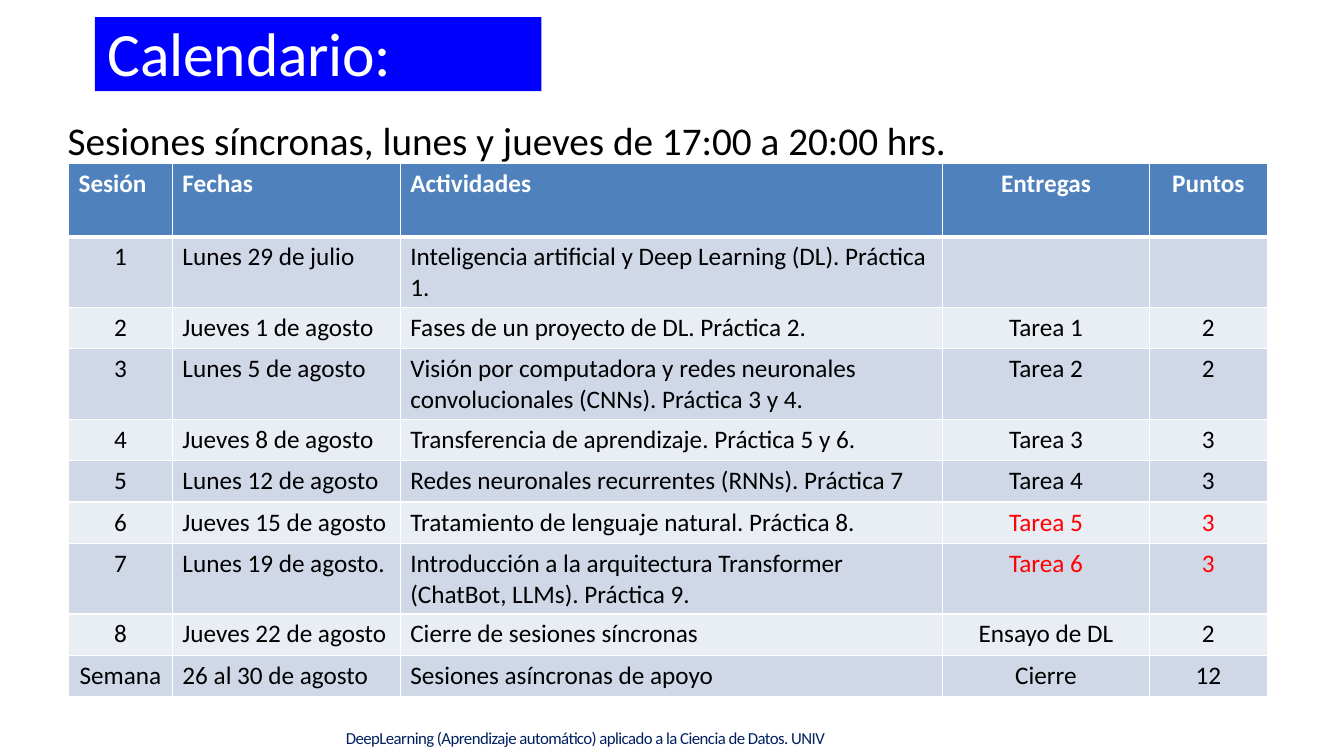
from lxml import etree
from pptx import Presentation
from pptx.dml.color import RGBColor
from pptx.enum.text import MSO_ANCHOR, MSO_AUTO_SIZE, PP_ALIGN
from pptx.oxml.ns import qn
from pptx.util import Inches, Pt

LEFT, CENTER = PP_ALIGN.LEFT, PP_ALIGN.CENTER
TOP = MSO_ANCHOR.TOP
GROW = MSO_AUTO_SIZE.SHAPE_TO_FIT_TEXT
WHITE, BLACK, RED = "FFFFFF", "000000", "FF0000"
HEADER, BANDS = "4F81BD", ("D0D8E8", "E9EDF4")


def paint(fill, color):
    fill.solid()
    fill.fore_color.rgb = RGBColor.from_string(color)


def write(paragraph, text, size, color, bold=False, spacing=0):
    run = paragraph.add_run()
    run.text = text
    for name, value in {"name": "Calibri", "size": Pt(size), "bold": bold}.items():
        setattr(run.font, name, value)
    paint(run.font.fill, color)
    if spacing:
        run.font._element.set("spc", str(round(spacing * 100)))


presentation = Presentation()
presentation.slide_width = Inches(13.33)
presentation.slide_height = Inches(7.5)
slide = presentation.slides.add_slide(presentation.slide_layouts[1])
title, schedule = slide.shapes.title, slide.placeholders[1]
footer = slide.shapes.add_textbox(0, 0, Inches(1), Inches(1))

texts = [
    (schedule, (0.67, 1.15, 12.29, 0.47), 0, 0,
     {"text": "Sesiones síncronas, lunes y jueves de 17:00 a 20:00 hrs.",
      "size": 28, "color": BLACK}),
    (title, (0.94, 0.17, 4.43, 0.72), 0.13, 0,
     {"text": "Calendario:", "size": 44, "color": WHITE, "spacing": -0.2}),
    (footer, (3.42, 7.21, 6.42, 0.22), 0.01, 1,
     {"text": "DeepLearning (Aprendizaje automático) aplicado a la Ciencia de Datos. UNIV",
      "size": 12, "color": "002060", "spacing": -0.4}),
]
for shape, place, indent, space_before, content in texts:
    for name, value in zip(("left", "top", "width", "height"), place):
        setattr(shape, name, Inches(value))
    frame = shape.text_frame
    frame_format = {"margin_left": 0, "margin_right": 0, "margin_top": 0,
                    "margin_bottom": 0, "word_wrap": True,
                    "vertical_anchor": TOP, "auto_size": GROW}
    for name, value in frame_format.items():
        setattr(frame, name, value)
    paragraph = frame.paragraphs[0]
    paragraph.alignment = LEFT
    paragraph.space_before = Pt(space_before)
    properties = paragraph._p.get_or_add_pPr()
    properties.set("marL", str(Inches(indent)))
    properties.set("indent", "0")
    etree.SubElement(properties, qn("a:buNone"))
    write(paragraph, **content)
title.text_frame.paragraphs[0].line_spacing = Pt(50.9)
footer.text_frame.margin_top = Inches(0.01)
paint(title.fill, "0000FF")

sessions = [
    ("Sesión", "Fechas", "Actividades", "Entregas", "Puntos"),
    ("1", "Lunes 29 de julio",
     "Inteligencia artificial y Deep Learning (DL). Práctica 1.", "", ""),
    ("2", "Jueves 1 de agosto", "Fases de un proyecto de DL. Práctica 2.", "Tarea 1", "2"),
    ("3", "Lunes 5 de agosto",
     "Visión por computadora y redes neuronales convolucionales (CNNs). Práctica 3 y 4.",
     "Tarea 2", "2"),
    ("4", "Jueves 8 de agosto", "Transferencia de aprendizaje. Práctica 5 y 6.", "Tarea 3", "3"),
    ("5", "Lunes 12 de agosto", "Redes neuronales recurrentes (RNNs). Práctica 7", "Tarea 4", "3"),
    ("6", "Jueves 15 de agosto", "Tratamiento de lenguaje natural. Práctica 8.", "Tarea 5", "3"),
    ("7", "Lunes 19 de agosto.",
     "Introducción a la arquitectura Transformer (ChatBot, LLMs). Práctica 9.",
     "Tarea 6", "3"),
    ("8", "Jueves 22 de agosto", "Cierre de sesiones síncronas", "Ensayo de DL", "2"),
    ("Semana", "26 al 30 de agosto", "Sesiones asíncronas de apoyo", "Cierre", "12"),
]
column_widths = (1.03, 2.26, 5.38, 2.05, 1.17)
calendar = slide.shapes.add_table(
    len(sessions), len(column_widths),
    Inches(0.68), Inches(1.62), Inches(11.89), Inches(5.26))
table = calendar.table
for column, width in zip(table.columns, column_widths):
    column.width = Inches(width)

for row_index, session in enumerate(sessions):
    is_header = row_index == 0
    table.rows[row_index].height = Inches(0.73 if is_header else 0.41)
    for column_index, text in enumerate(session):
        cell = table.cell(row_index, column_index)
        for side in ("lnL", "lnR", "lnT", "lnB"):
            thick = (is_header and side == "lnB") or (row_index == 1 and side == "lnT")
            border = etree.SubElement(cell._tc.get_or_add_tcPr(), qn(f"a:{side}"),
                                      w=str(Pt(3 if thick else 1)))
            border_fill = etree.SubElement(border, qn("a:solidFill"))
            etree.SubElement(border_fill, qn("a:srgbClr"), val=WHITE)
        paint(cell.fill, HEADER if is_header else BANDS[(row_index - 1) % 2])
        paragraph = cell.text_frame.paragraphs[0]
        centered = column_index > 2 or (column_index == 0 and not is_header)
        paragraph.alignment = CENTER if centered else LEFT
        highlighted = session[0] in ("6", "7") and column_index > 2
        color = WHITE if is_header else RED if highlighted else BLACK
        if text:
            write(paragraph, text, 18, color, bold=is_header)
calendar.height = Inches(5.26)

presentation.save("out.pptx")
